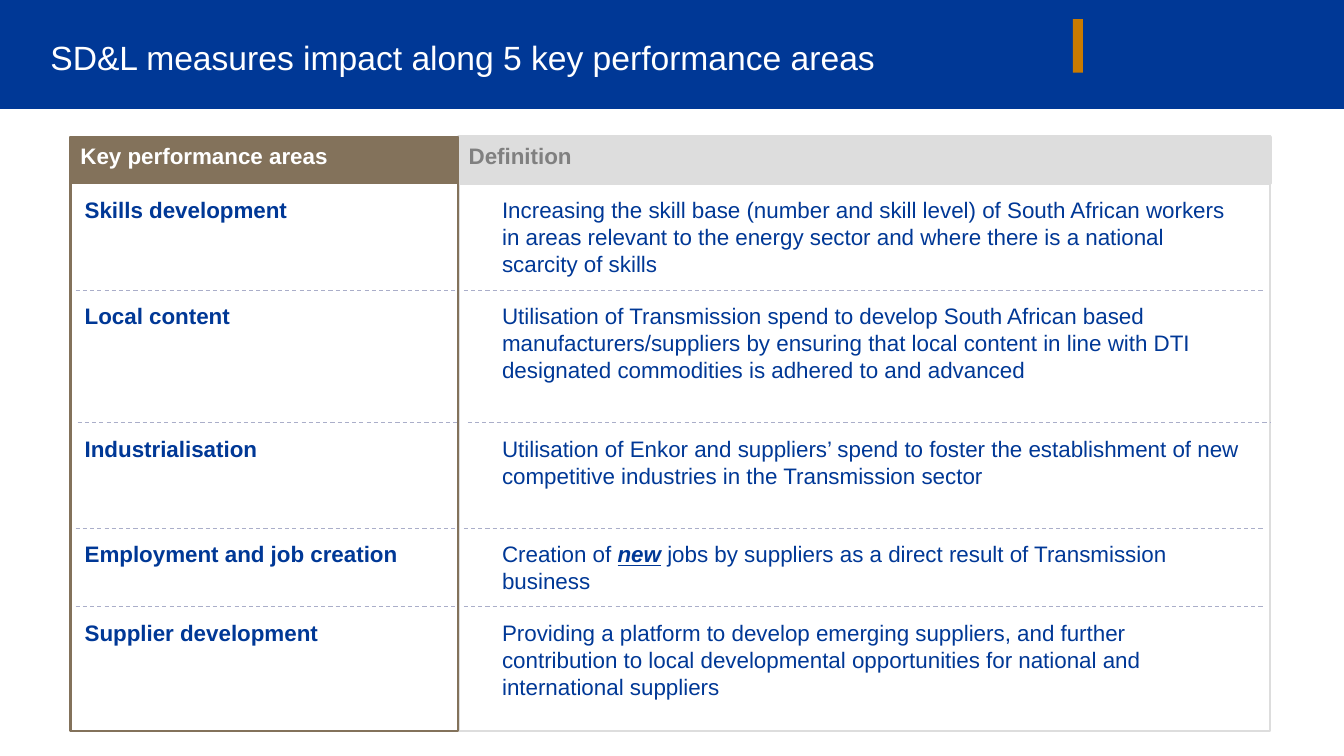
from dataclasses import dataclass

from lxml.etree import SubElement
from pptx import Presentation
from pptx.dml.color import RGBColor
from pptx.enum.dml import MSO_LINE
from pptx.enum.shapes import MSO_CONNECTOR, MSO_SHAPE
from pptx.enum.text import MSO_ANCHOR, PP_ALIGN
from pptx.oxml.ns import qn
from pptx.util import Inches, Pt


@dataclass(frozen=True)
class Theme:
    font: str = "Arial"
    blue: str = "003896"
    orange: str = "C97A00"
    brown: str = "83725B"
    silver: str = "DDDDDD"
    gray: str = "808080"
    rule: str = "AAAEC9"
    white: str = "FFFFFF"
    title: int = 24
    body: int = 16


THEME = Theme()
TITLE = "SD&L measures impact along 5 key performance areas"
COLUMNS = [
    ("Definition", 4.55, 8.05, THEME.silver, THEME.gray, 2.25),
    ("Key performance areas", 0.7, 3.84, THEME.brown, THEME.white, 1.5),
]
AREAS = [
    (1.95, "Skills development",
     ["Increasing the skill base (number and skill level) of South African workers "
      "in areas relevant to the energy sector and where there is a national scarcity of skills"]),
    (3.0, "Local content",
     ["Utilisation of Transmission spend to develop South African based "
      "manufacturers/suppliers by ensuring that local content in line with DTI "
      "designated commodities is adhered to and advanced"]),
    (4.32, "Industrialisation",
     ["Utilisation of Enkor and suppliers’ spend to foster the establishment of "
      "new competitive industries in the Transmission sector"]),
    (5.36, "Employment and job creation",
     ["Creation of ", "new",
      " jobs by suppliers as a direct result of Transmission business"]),
    (6.14, "Supplier development",
     ["Providing a platform to develop emerging suppliers, and further contribution "
      "to local developmental opportunities for national and international suppliers"]),
]
SPANS = [(0.75, 4.53), (4.6, 12.55)]
SHIFTED_SPANS = [(0.77, 4.54), (4.64, 12.6)]
RULES = [(2.88, SPANS), (4.19, SHIFTED_SPANS), (5.24, SPANS), (6.02, SPANS)]
TOP, PANEL_H, HEADER_H = 1.36, 5.89, 0.46


def style(r, color, size=THEME.body, bold=False):
    """Format the font of a run."""
    r.font.name = THEME.font
    r.font.size = Pt(size)
    r.font.bold = bold
    r.font.color.rgb = RGBColor.from_string(color)


def add_rect(s, x, y, w, h, fill, line=None, width=1.5):
    """Add a flat rectangle with an optional outline."""
    sp = s.shapes.add_shape(MSO_SHAPE.RECTANGLE, Inches(x), Inches(y), Inches(w), Inches(h))
    sp.shadow.inherit = False
    sp.fill.solid()
    sp.fill.fore_color.rgb = RGBColor.from_string(fill)
    if line:
        sp.line.color.rgb = RGBColor.from_string(line)
        sp.line.width = Pt(width)
    else:
        sp.line.fill.background()
    return sp


def add_text(s, x, y, w, h, parts, bold=False, indent=0):
    """Add a text box; a second part is emphasised."""
    tf = s.shapes.add_textbox(Inches(x), Inches(y), Inches(w), Inches(h)).text_frame
    tf.word_wrap = True
    tf.margin_left = Inches(indent)
    tf.margin_top = tf.margin_right = tf.margin_bottom = 0
    for i, part in enumerate(parts):
        r = tf.paragraphs[0].add_run()
        r.text = part
        style(r, THEME.blue, bold=bold or i == 1)
        if i == 1:
            r.font.italic = r.font.underline = True


def add_rule(s, y, x1, x2):
    """Add a dashed horizontal line."""
    cn = s.shapes.add_connector(MSO_CONNECTOR.STRAIGHT, Inches(x1), Inches(y), Inches(x2), Inches(y))
    cn.line.color.rgb = RGBColor.from_string(THEME.rule)
    cn.line.width = Pt(0.75)
    cn.line.dash_style = MSO_LINE.DASH
    SubElement(cn.element.spPr, qn("a:effectLst"))


def add_title(s):
    """Place the title over the blue band."""
    title = s.shapes.title
    title.left, title.top, title.width, title.height = map(Inches, (0.4, 0.23, 10.4, 0.73))
    tf = title.text_frame
    tf.text = TITLE
    tf.vertical_anchor = MSO_ANCHOR.MIDDLE
    p = tf.paragraphs[0]
    p.alignment = PP_ALIGN.LEFT
    p.line_spacing = 0.9
    style(p.runs[0], THEME.white, THEME.title)
    band = add_rect(s, 0, 0, 13.33, 1.08, THEME.blue)
    title.element.addprevious(band.element)
    add_rect(s, 10.64, 0.19, 0.1, 0.53, THEME.orange)


def add_column(s, heading, x, w, fill, color, width):
    """Add an outlined panel with its header."""
    add_rect(s, x, TOP, w, PANEL_H, THEME.white, fill)
    tf = add_rect(s, x, TOP, w, HEADER_H, fill, fill, width).text_frame
    tf.text = heading
    tf.word_wrap = True
    tf.vertical_anchor = MSO_ANCHOR.TOP
    p = tf.paragraphs[0]
    p.alignment = PP_ALIGN.LEFT
    style(p.runs[0], color, bold=True)


def main():
    """Build and save the slide."""
    prs = Presentation()
    prs.slide_width, prs.slide_height = Inches(13.33), Inches(7.5)
    s = prs.slides.add_slide(prs.slide_layouts[5])
    add_title(s)
    for column in COLUMNS:
        add_column(s, *column)
    for y, area, definition in AREAS:
        add_text(s, 4.76, y, 7.56, 0.81, definition, indent=0.22)
        add_text(s, 0.84, y, 3.24, 0.27, [area], bold=True)
    for y, spans in RULES:
        for x1, x2 in spans:
            add_rule(s, y, x1, x2)
    prs.save("out.pptx")


if __name__ == "__main__":
    main()
